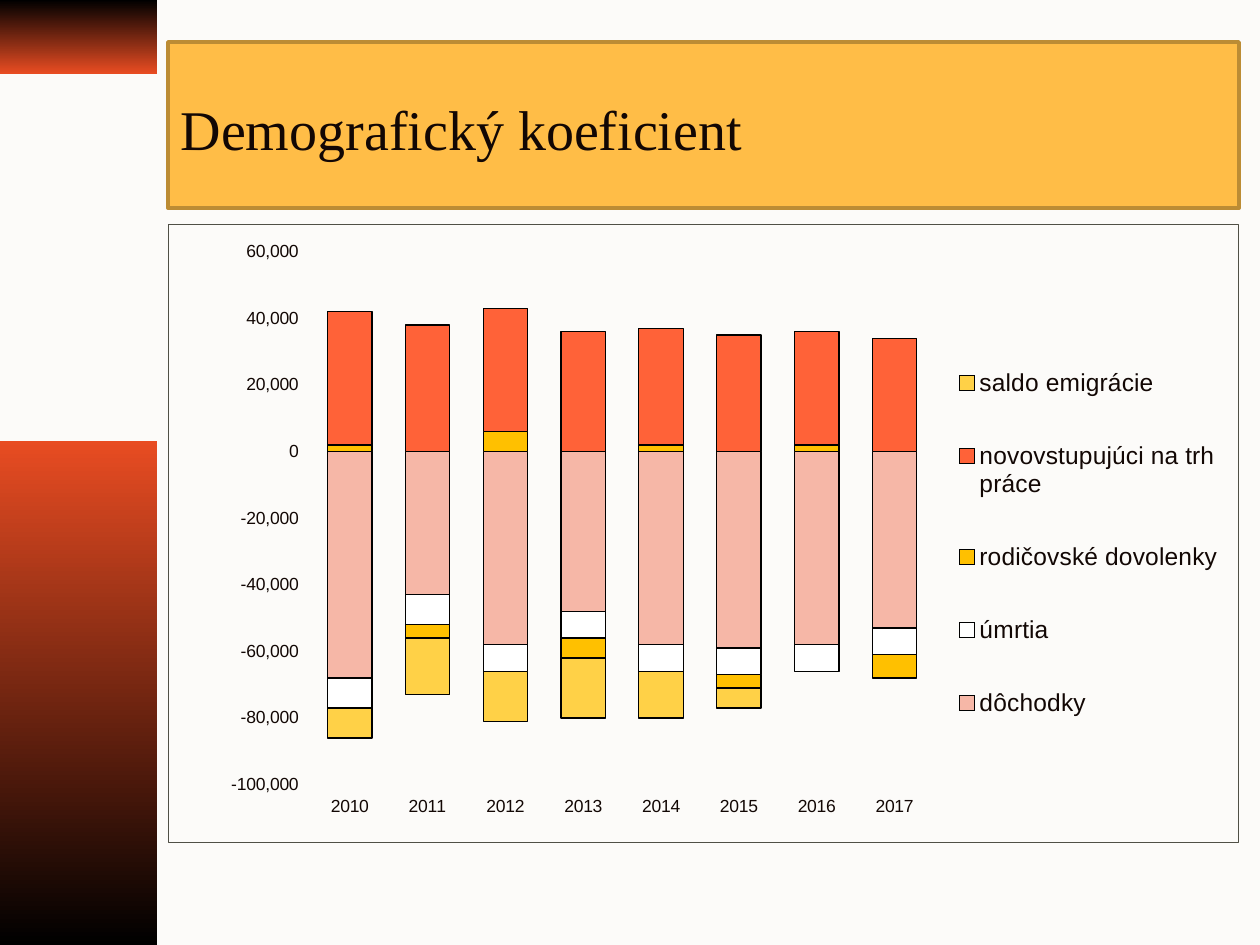
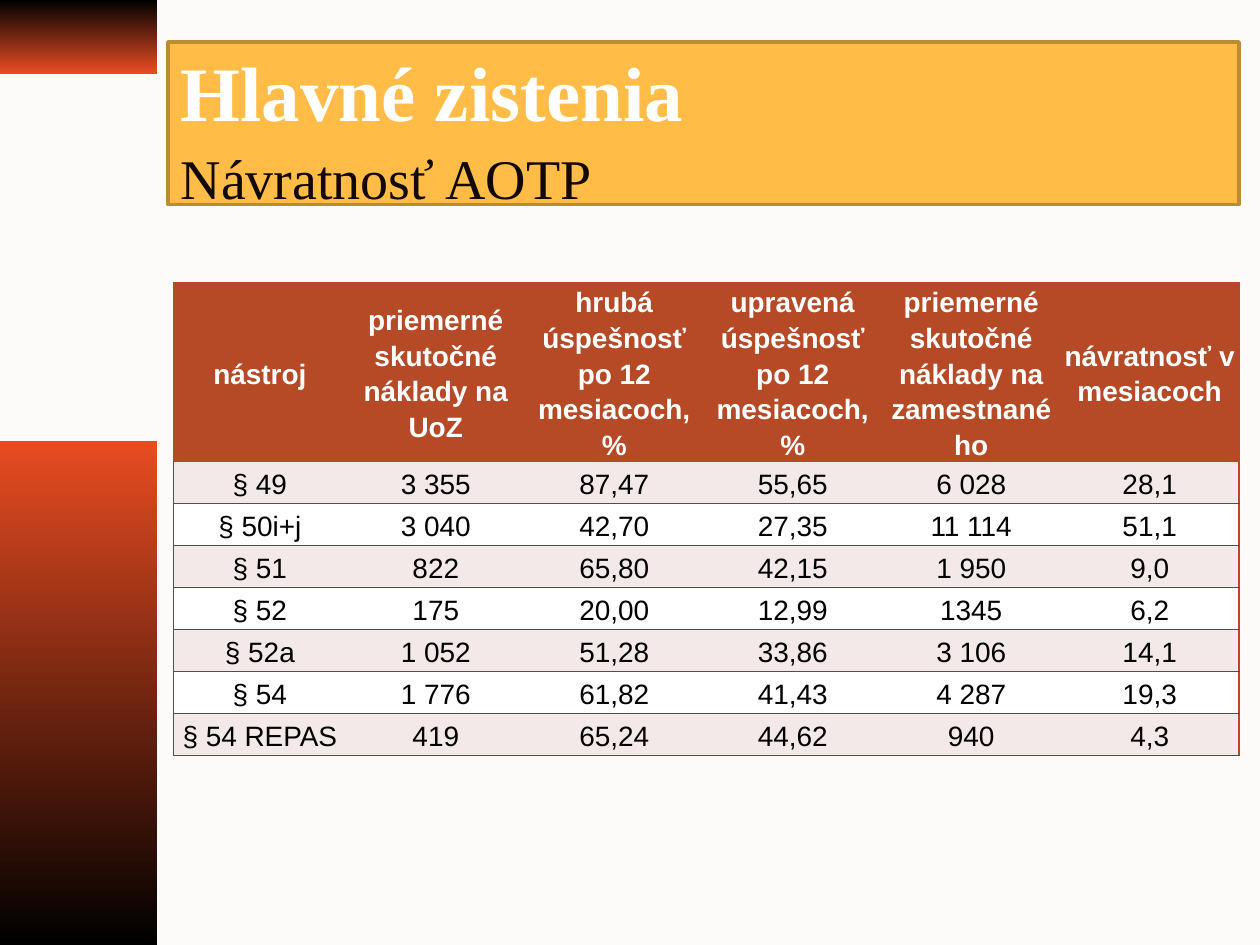
from lxml import etree
from pptx import Presentation
from pptx.chart.data import CategoryChartData
from pptx.dml.color import RGBColor
from pptx.enum import chart as ch, shapes, text
from pptx.oxml import parse_xml
from pptx.oxml.ns import nsdecls, qn
from pptx.util import Pt

PAPER = RGBColor(0xFC, 0xFB, 0xF9)
INK = RGBColor(0x12, 0x07, 0x04)
BLACK = RGBColor(0, 0, 0)
WHITE = RGBColor(255, 255, 255)
ORANGE = RGBColor(0xE8, 0x4C, 0x22)
AMBER = RGBColor(0xFF, 0xBD, 0x47)
AMBER_EDGE = RGBColor(0xBC, 0x8C, 0x34)
RUST = RGBColor(0xB6, 0x49, 0x26)
ROSE = RGBColor(0xF3, 0xE9, 0xE8)
GREY = RGBColor(0x50, 0x50, 0x46)


def place(parent, position, x, y, w, h, inner=False):
    """Give a chart part a manual layout, in fractions of the chart."""
    for old in parent.findall(qn("c:layout")):
        parent.remove(old)
    target = '<c:layoutTarget val="inner"/>' if inner else ""
    parent.insert(position, parse_xml(
        f'<c:layout {nsdecls("c")}><c:manualLayout>{target}'
        '<c:xMode val="edge"/><c:yMode val="edge"/>'
        f'<c:x val="{x}"/><c:y val="{y}"/><c:w val="{w}"/><c:h val="{h}"/>'
        '</c:manualLayout></c:layout>'))


def border(cell, side, width, color):
    """Draw one cell edge; side is L, R, T or B."""
    line = etree.SubElement(cell._tc.get_or_add_tcPr(), qn(f"a:ln{side}"), w=str(Pt(width)))
    fill = etree.SubElement(line, qn("a:solidFill"))
    etree.SubElement(fill, qn("a:srgbClr"), val=str(color))


prs = Presentation()
prs.slide_width, prs.slide_height = Pt(720), Pt(540)
background = prs.slide_master.background.fill
background.solid()
background.fore_color.rgb = PAPER

# Shared frame: side bands and title bar
bands = [(0, 42, BLACK, ORANGE), (252, 288, ORANGE, BLACK)]
titles = [
    (95, [("Demografický koeficient", 32, False, INK)]),
    (93, [("Hlavné zistenia", 44, True, WHITE), ("Návratnosť AOTP", 32, False, INK)]),
]
slides = []
for title_height, title_lines in titles:
    slide = prs.slides.add_slide(prs.slide_layouts[5])
    slides.append(slide)
    for top, height, start, end in bands:
        band = slide.shapes.add_shape(
            shapes.MSO_SHAPE.RECTANGLE, 0, Pt(top), Pt(90), Pt(height))
        band.shadow.inherit = False
        band.line.fill.background()
        band.fill.gradient()
        band.fill.gradient_angle = 270
        for stop, color in zip(band.fill.gradient_stops, (start, end)):
            stop.color.rgb = color

    title = slide.shapes.title
    title.left, title.top, title.width, title.height = Pt(96), Pt(24), Pt(612), Pt(title_height)
    title.fill.solid()
    title.fill.fore_color.rgb = AMBER
    title.line.color.rgb = AMBER_EDGE
    title.line.width = Pt(2)
    title.text_frame.auto_size = text.MSO_AUTO_SIZE.NONE
    title.text_frame.vertical_anchor = text.MSO_ANCHOR.MIDDLE
    heading = title.text_frame.paragraphs[0]
    heading.alignment = text.PP_ALIGN.LEFT
    heading.line_spacing = 1.1
    heading.font.name = "Times New Roman"
    for i, (words, size, bold, color) in enumerate(title_lines):
        if i:
            heading.add_line_break()
        run = heading.add_run()
        run.text = words
        run.font.name = "Times New Roman"
        run.font.size, run.font.bold = Pt(size), bold
        run.font.color.rgb = color

# Slide 1: labour market inflows and outflows
flows = [
    ("dôchodky", "F6B7A7",
     (-68000, -43000, -58000, -48000, -58000, -59000, -58000, -53000)),
    ("úmrtia", "FFFFFF",
     (-9000, -9000, -8000, -8000, -8000, -8000, -8000, -8000)),
    ("rodičovské dovolenky", "FFC000",
     (2000, -4000, 6000, -6000, 2000, -4000, 2000, -7000)),
    ("novovstupujúci na trh práce", "FF6238",
     (40000, 38000, 37000, 36000, 35000, 35000, 34000, 34000)),
    ("saldo emigrácie", "FFD147",
     (-9000, -17000, -15000, -18000, -14000, -6000, None, None)),
]
data = CategoryChartData(number_format="#,##0")
data.categories = [str(year) for year in range(2010, 2018)]
for name, _, values in flows:
    data.add_series(name, values)
chart = slides[0].shapes.add_chart(
    ch.XL_CHART_TYPE.COLUMN_STACKED, Pt(96), Pt(128), Pt(612), Pt(354), data).chart
chart.has_title = False
chart.font.name, chart.font.size = "Arial", Pt(10)
chart.font.color.rgb = INK

plot = chart.plots[0]
plot.gap_width, plot.overlap = 75, 100
plot.vary_by_categories = False
for series, (_, color, _) in zip(plot.series, flows):
    series.invert_if_negative = False
    series.format.fill.solid()
    series.format.fill.fore_color.rgb = RGBColor.from_string(color)
    series.format.line.color.rgb = BLACK
    series.format.line.width = Pt(0.75)

amounts, years = chart.value_axis, chart.category_axis
amounts.minimum_scale, amounts.maximum_scale, amounts.major_unit = -100000, 60000, 20000
amounts.has_major_gridlines = False
amounts.tick_labels.number_format = "#,##0"
amounts.tick_labels.number_format_is_linked = False
years.tick_label_position = ch.XL_TICK_LABEL_POSITION.LOW
for axis in (amounts, years):
    axis.format.line.fill.background()

chart.has_legend = True
legend = chart.legend
legend.position = ch.XL_LEGEND_POSITION.RIGHT
legend.include_in_layout = False
legend.font.name, legend.font.size = "Arial", Pt(14)
legend.font.color.rgb = INK

chart_root = chart.element
place(chart_root.find(".//" + qn("c:plotArea")), 0, 0.133, 0.044, 0.582, 0.862, inner=True)
place(chart_root.find(".//" + qn("c:legend")), 1, 0.73, 0.16, 0.26, 0.71)
chart_root.find(qn("c:chart")).addnext(parse_xml(
    f'<c:spPr {nsdecls("c", "a")}><a:noFill/><a:ln w="{Pt(0.75)}"><a:solidFill>'
    f'<a:srgbClr val="{GREY}"/></a:solidFill></a:ln></c:spPr>'))

# Slide 2: return on active labour market measures
measures = [
    ("nástroj", "priemerné skutočné náklady na UoZ", "hrubá úspešnosť po 12 mesiacoch, %",
     "upravená úspešnosť po 12 mesiacoch, %", "priemerné skutočné náklady na zamestnaného",
     "návratnosť v mesiacoch"),
    ("§ 49", "3 355", "87,47", "55,65", "6 028", "28,1"),
    ("§ 50i+j", "3 040", "42,70", "27,35", "11 114", "51,1"),
    ("§ 51", "822", "65,80", "42,15", "1 950", "9,0"),
    ("§ 52", "175", "20,00", "12,99", "1345", "6,2"),
    ("§ 52a", "1 052", "51,28", "33,86", "3 106", "14,1"),
    ("§ 54", "1 776", "61,82", "41,43", "4 287", "19,3"),
    ("§ 54 REPAS", "419", "65,24", "44,62", "940", "4,3"),
]
frame = slides[1].shapes.add_table(
    len(measures), len(measures[0]), Pt(99), Pt(161.5), Pt(609), Pt(270))
frame.element.find(".//" + qn("a:tableStyleId")).text = "{2D5ABB26-0587-4C30-8999-92F81FD0307C}"
table = frame.table
for i, column in enumerate(table.columns):
    column.width = Pt(102 if i else 99)
for r, values in enumerate(measures):
    header = r == 0
    table.rows[r].height = Pt(102 if header else 24)
    edge = (1, RUST) if header else (0.5, GREY)
    for c, value in enumerate(values):
        cell = table.cell(r, c)
        if c == 0:
            border(cell, "L", *edge)
        if c == len(values) - 1:
            border(cell, "R", 1, RUST)
        if header:
            border(cell, "T", *edge)
        border(cell, "B", *edge)
        cell.fill.solid()
        cell.fill.fore_color.rgb = RUST if header else ROSE if r % 2 else WHITE
        cell.margin_left = cell.margin_right = Pt(1.5)
        cell.margin_top = cell.margin_bottom = 0
        cell.vertical_anchor = text.MSO_ANCHOR.MIDDLE
        cell.text = value
        entry = cell.text_frame.paragraphs[0]
        entry.alignment = text.PP_ALIGN.CENTER
        entry.line_spacing = 1.15
        entry.font.name, entry.font.size, entry.font.bold = "Arial", Pt(16), header
        entry.font.color.rgb = WHITE if header else BLACK

prs.save("out.pptx")
